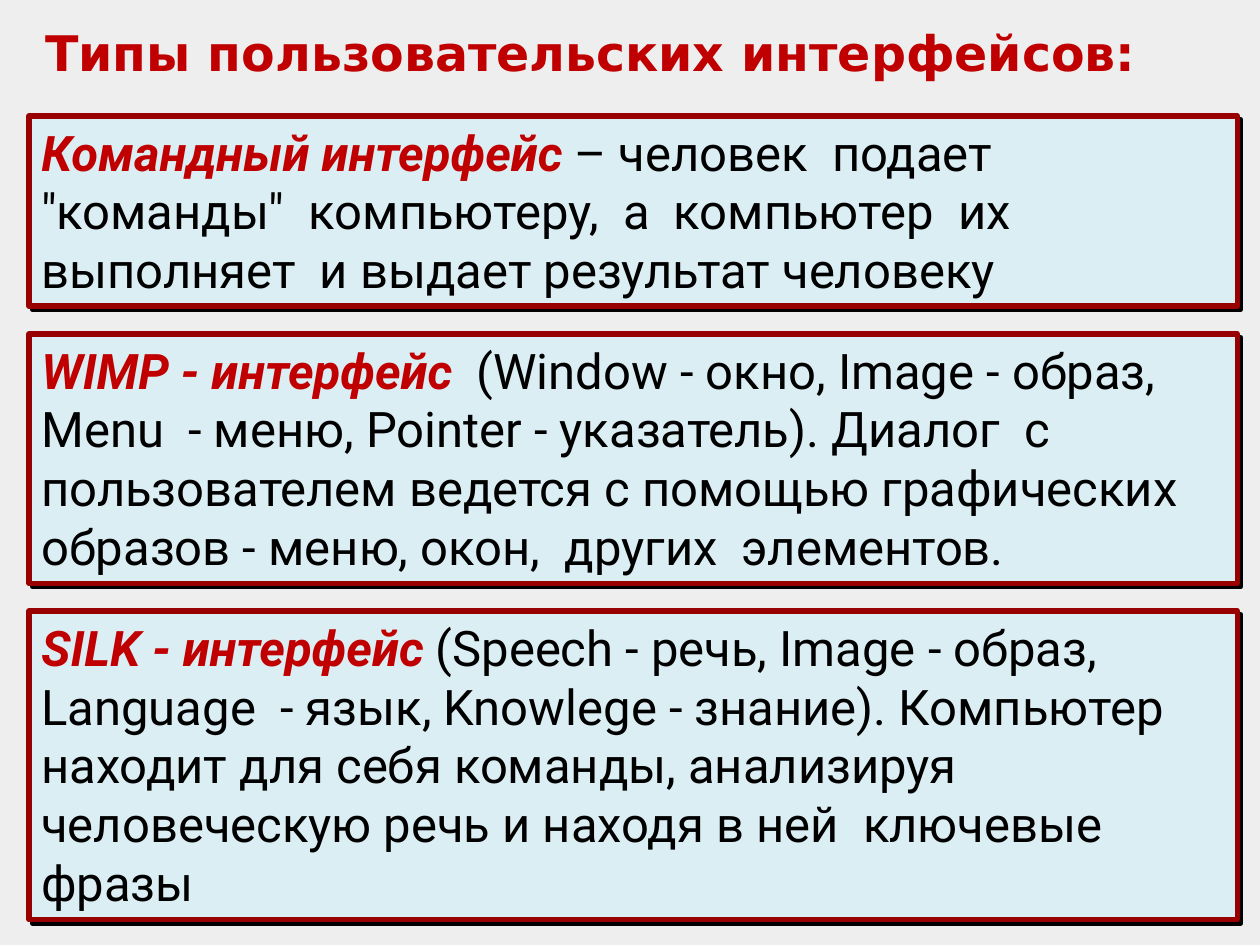
from lxml.etree import SubElement
from pptx import Presentation
from pptx.dml.color import RGBColor
from pptx.enum.shapes import MSO_SHAPE
from pptx.enum.text import MSO_ANCHOR, MSO_AUTO_SIZE, PP_ALIGN
from pptx.oxml.ns import qn
from pptx.util import Inches, Pt

RED, BLACK = "C00000", "000000"
LEFT, WIDTH, TOP, GAP = 0.23, 9.59, 0.92, 0.22
LINE, PAD = 0.47, 0.1

# Term, its definition, number of text lines
CARDS = [
    ("Командный интерфейс",
     ' – человек  подает  "команды"  компьютеру,  а  компьютер  их  '
     "выполняет  и выдает результат человеку", 3),
    ("WIMP - интерфейс  ",
     "(Window - окно, Image - образ, Menu  - меню, Pointer - указатель). "
     "Диалог  с пользователем ведется с помощью графических образов - меню, "
     "окон,  других  элементов.", 4),
    ("SILK - интерфейс ",
     "(Speech - речь, Image - образ, Language  - язык, Knowlege - знание). "
     "Компьютер находит для себя команды, анализируя человеческую речь и "
     "находя в ней  ключевые  фразы", 5),
]


def color(code):
    return RGBColor.from_string(code)


def write(para, text, face="Roboto", size=28, ink=BLACK, bold=False, slant=False):
    run = para.add_run()
    run.text = text
    font = run.font
    font.name, font.size = face, Pt(size)
    font.bold, font.italic = bold, slant
    font.color.rgb = color(ink)


def frame(shape, anchor):
    """Set up the text area and return its first paragraph."""
    area = shape.text_frame
    area.word_wrap = True
    area.auto_size = MSO_AUTO_SIZE.SHAPE_TO_FIT_TEXT
    area.vertical_anchor = anchor
    para = area.paragraphs[0]
    para.alignment = PP_ALIGN.LEFT
    return para


def shade(shape):
    """Add a hard black shadow to the lower right."""
    shape.shadow.inherit = False
    effects = shape._element.spPr.find(qn("a:effectLst"))
    outer = SubElement(effects, qn("a:outerShdw"), dist=str(Pt(2.8)),
                       dir=str(45 * 60000), algn="ctr", rotWithShape="0")
    SubElement(outer, qn("a:srgbClr"), val=BLACK)


def title(slide, box, text):
    shape = slide.shapes.add_textbox(*map(Inches, box))
    write(frame(shape, MSO_ANCHOR.TOP), text, face="DejaVu Sans", ink=RED, bold=True)


def card(slide, box, term, text):
    shape = slide.shapes.add_shape(MSO_SHAPE.RECTANGLE, *map(Inches, box))
    shape.fill.solid()
    shape.fill.fore_color.rgb = color("DBEEF4")
    shape.line.color.rgb = color("990000")
    shape.line.width = Pt(3)
    shade(shape)
    para = frame(shape, MSO_ANCHOR.TOP)
    write(para, term, ink=RED, bold=True, slant=True)
    write(para, text)


def main():
    deck = Presentation()
    deck.slide_width, deck.slide_height = Inches(10), Inches(7.5)
    slide = deck.slides.add_slide(deck.slide_layouts[6])
    slide.background.fill.solid()
    slide.background.fill.fore_color.rgb = color("EEEEEE")

    title(slide, (0.26, 0.13, 9.37, 0.57), "Типы пользовательских интерфейсов:")
    top = TOP
    for term, text, lines in CARDS:
        height = PAD + lines * LINE
        card(slide, (LEFT, top, WIDTH, height), term, text)
        top += height + GAP
    deck.save("out.pptx")


if __name__ == "__main__":
    main()
